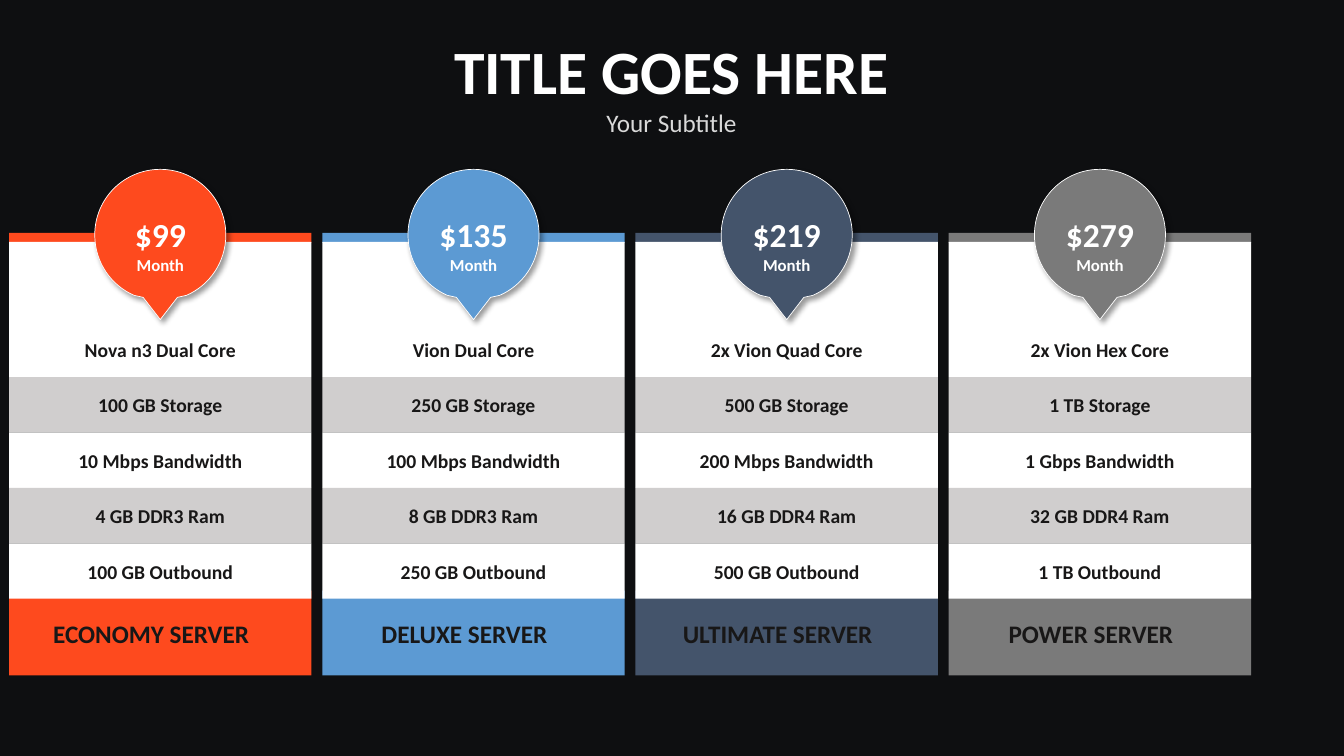
"""Build a pricing slide that compares four server plans."""
from dataclasses import dataclass

from lxml import etree
from pptx import Presentation
from pptx.dml.color import RGBColor
from pptx.enum.shapes import MSO_SHAPE
from pptx.enum.text import MSO_ANCHOR, MSO_AUTO_SIZE, PP_ALIGN
from pptx.oxml.ns import qn
from pptx.shapes.autoshape import Shape
from pptx.shapes.shapetree import GroupShapes, SlideShapes
from pptx.slide import Slide
from pptx.text.text import TextFrame
from pptx.util import Inches, Pt

RECTANGLE = MSO_SHAPE.RECTANGLE
CENTER = PP_ALIGN.CENTER
MIDDLE = MSO_ANCHOR.MIDDLE
FIT_SHAPE = MSO_AUTO_SIZE.SHAPE_TO_FIT_TEXT

FONT = "Calibri"
BACKGROUND, WHITE, STRIPE, INK, SUBTITLE = "0E0F11", "FFFFFF", "D0CECE", "181717", "D9D9D9"

SLIDE_WIDTH, SLIDE_HEIGHT = 13.33, 7.5
FIRST_LEFT, LAST_LEFT, COLUMN_WIDTH = 0.09, 9.41, 3
BAR_TOP, BAR_HEIGHT = 2.31, 0.1
HEADER_TOP, HEADER_HEIGHT = 2.4, 1.34
ROW_TOP, ROW_HEIGHT = 3.74, 0.55
ROW_LABEL_TOP, ROW_LABEL_HEIGHT = 3.35, 0.24
FOOTER_TOP, FOOTER_HEIGHT = 5.86, 0.84
FOOTER_LABEL_TOP, FOOTER_LABEL_HEIGHT, FOOTER_LABEL_SHIFT = 6.13, 0.3, 0.09
PIN_LEFT, PIN_TOP = 0.85, 1.68
PIN_CORNERS = [(0.65, 0), (1.3, 0.65), (0.65, 1.49), (0, 0.65)]
PIN_OUTLINE = [
    ("moveTo", [(0.65, 0)]),
    ("cubicBezTo", [(1.01, 0), (1.3, 0.29), (1.3, 0.65)]),
    ("cubicBezTo", [(1.3, 0.92), (1.14, 1.15), (0.91, 1.25)]),
    ("lnTo", [(0.82, 1.27)]),
    ("lnTo", [(0.65, 1.49)]),
    ("lnTo", [(0.48, 1.27)]),
    ("lnTo", [(0.39, 1.25)]),
    ("cubicBezTo", [(0.16, 1.15), (0, 0.92), (0, 0.65)]),
    ("cubicBezTo", [(0, 0.29), (0.29, 0), (0.65, 0)]),
    ("close", []),
]


@dataclass(frozen=True)
class Plan:
    name: str
    price: str
    color: str
    features: tuple[str, ...]


@dataclass(frozen=True)
class Line:
    text: str
    size: float
    color: str
    bold: bool = True


@dataclass(frozen=True)
class Box:
    left: float
    top: float
    width: float
    height: float


PLANS = [
    Plan("ECONOMY SERVER", "$99", "FE4A1E",
         ("Nova n3 Dual Core", "100 GB Storage", "10 Mbps Bandwidth",
          "4 GB DDR3 Ram", "100 GB Outbound")),
    Plan("DELUXE SERVER", "$135", "5C9AD3",
         ("Vion Dual Core", "250 GB Storage", "100 Mbps Bandwidth",
          "8 GB DDR3 Ram", "250 GB Outbound")),
    Plan("ULTIMATE SERVER", "$219", "44546B",
         ("2x Vion Quad Core", "500 GB Storage", "200 Mbps Bandwidth",
          "16 GB DDR4 Ram", "500 GB Outbound")),
    Plan("POWER SERVER", "$279", "7A7A7A",
         ("2x Vion Hex Core", "1 TB Storage", "1 Gbps Bandwidth",
          "32 GB DDR4 Ram", "1 TB Outbound")),
]


def rgb(color: str) -> RGBColor:
    return RGBColor.from_string(color)


def write_lines(frame: TextFrame, lines: list[Line]) -> None:
    frame.word_wrap = True
    for index, line in enumerate(lines):
        paragraph = frame.add_paragraph() if index else frame.paragraphs[0]
        paragraph.text = line.text
        paragraph.alignment = CENTER
        font = paragraph.font
        font.name, font.size, font.bold = FONT, Pt(line.size), line.bold
        font.color.rgb = rgb(line.color)


def add_bar(shapes: SlideShapes | GroupShapes, box: Box, color: str) -> Shape:
    bar = shapes.add_shape(RECTANGLE, Inches(box.left), Inches(box.top),
                           Inches(box.width), Inches(box.height))
    bar.shadow.inherit = False
    bar.fill.solid()
    bar.fill.fore_color.rgb = rgb(color)
    bar.line.fill.background()
    return bar


def add_backdrop(slide: Slide) -> None:
    slide.background.fill.solid()
    slide.background.fill.fore_color.rgb = rgb(BACKGROUND)
    overlay = add_bar(slide.shapes, Box(0, 0, SLIDE_WIDTH, SLIDE_HEIGHT), BACKGROUND)
    color = overlay._element.spPr.find(qn("a:solidFill")).find(qn("a:srgbClr"))
    etree.SubElement(color, qn("a:alpha"), val="80000")


def add_text(shapes: SlideShapes | GroupShapes, box: Box, lines: list[Line]) -> TextFrame:
    text_box = shapes.add_textbox(Inches(box.left), Inches(box.top),
                                  Inches(box.width), Inches(box.height))
    frame = text_box.text_frame
    write_lines(frame, lines)
    frame.auto_size = FIT_SHAPE
    return frame


def add_cell(slide: Slide, bar: Box, color: str, label: Box, line: Line) -> None:
    shapes = slide.shapes.add_group_shape().shapes
    add_bar(shapes, bar, color)
    frame = add_text(shapes, label, [line])
    frame.margin_left = frame.margin_top = frame.margin_right = frame.margin_bottom = 0


def add_drop_shadow(shape: Shape) -> None:
    shape.shadow.inherit = False
    effects = shape._element.spPr.find(qn("a:effectLst"))
    shadow = etree.SubElement(effects, qn("a:outerShdw"), blurRad=str(Pt(4)),
                              dist=str(Pt(3)), dir=str(45 * 60000), rotWithShape="0")
    color = etree.SubElement(shadow, qn("a:srgbClr"), val="000000")
    etree.SubElement(color, qn("a:alpha"), val="40000")


def round_outline(shape: Shape) -> None:
    outline = next(shape._element.iter(qn("a:path")))
    for segment in list(outline):
        outline.remove(segment)
    for kind, points in PIN_OUTLINE:
        segment = etree.SubElement(outline, qn(f"a:{kind}"))
        for x, y in points:
            etree.SubElement(segment, qn("a:pt"), x=str(Inches(x)), y=str(Inches(y)))


def add_price_pin(slide: Slide, left: float, plan: Plan) -> None:
    corners = [(Inches(left + x), Inches(PIN_TOP + y)) for x, y in PIN_CORNERS]
    builder = slide.shapes.build_freeform(*corners[0])
    builder.add_line_segments(corners[1:], close=True)
    pin = builder.convert_to_shape()
    round_outline(pin)
    pin.fill.solid()
    pin.fill.fore_color.rgb = rgb(plan.color)
    pin.line.color.rgb = rgb(WHITE)
    pin.line.width = Pt(0.5)
    add_drop_shadow(pin)
    pin.text_frame.vertical_anchor = MIDDLE
    write_lines(pin.text_frame, [Line(plan.price, 24, WHITE), Line("Month", 12, WHITE)])


def add_plan(slide: Slide, left: float, plan: Plan) -> None:
    add_bar(slide.shapes, Box(left, BAR_TOP, COLUMN_WIDTH, BAR_HEIGHT), plan.color)
    add_cell(slide, Box(left, FOOTER_TOP, COLUMN_WIDTH, FOOTER_HEIGHT), plan.color,
             Box(left - FOOTER_LABEL_SHIFT, FOOTER_LABEL_TOP, COLUMN_WIDTH, FOOTER_LABEL_HEIGHT),
             Line(plan.name, 18, INK))
    for index, feature in enumerate(plan.features):
        bar = Box(left, ROW_TOP + (index - 1) * ROW_HEIGHT, COLUMN_WIDTH, ROW_HEIGHT)
        if index == 0:
            bar = Box(left, HEADER_TOP, COLUMN_WIDTH, HEADER_HEIGHT)
        label = Box(left, ROW_LABEL_TOP + index * ROW_HEIGHT, COLUMN_WIDTH, ROW_LABEL_HEIGHT)
        add_cell(slide, bar, STRIPE if index % 2 else WHITE, label, Line(feature, 14, INK))
    add_price_pin(slide, left + PIN_LEFT, plan)


def main() -> None:
    presentation = Presentation()
    presentation.slide_width, presentation.slide_height = Inches(SLIDE_WIDTH), Inches(SLIDE_HEIGHT)
    slide = presentation.slides.add_slide(presentation.slide_layouts[6])
    add_backdrop(slide)
    add_text(slide.shapes, Box(3.65, 0.28, 6.02, 1.14),
             [Line("TITLE GOES HERE", 44, WHITE), Line("Your Subtitle", 18, SUBTITLE, False)])
    pitch = (LAST_LEFT - FIRST_LEFT) / (len(PLANS) - 1)
    for index, plan in enumerate(PLANS):
        add_plan(slide, FIRST_LEFT + index * pitch, plan)
    presentation.save("out.pptx")


if __name__ == "__main__":
    main()
